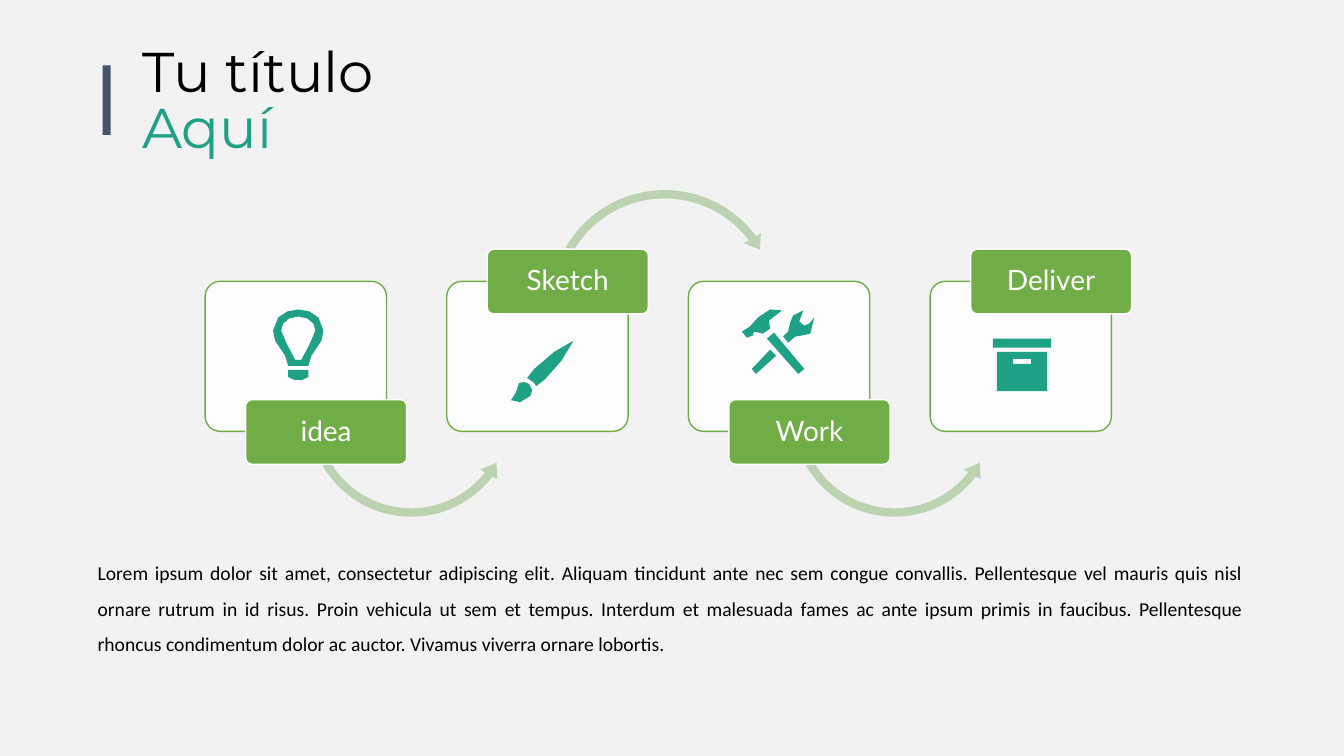
import pptx
import pptx.dml.color
import pptx.enum.shapes
import pptx.enum.text
import pptx.oxml.ns
import pptx.util
from lxml import etree
from pptx.util import Cm

COLORS = {"background": "F2F2F2", "white": "FFFFFF", "green": "70AD47", "arrow": "BBD3B1",
          "teal": "1EA185", "slate": "44546A", "black": "000000"}
SHAPES = pptx.enum.shapes.MSO_SHAPE
ALIGN = pptx.enum.text.PP_ALIGN
MIDDLE = pptx.enum.text.MSO_ANCHOR.MIDDLE


def style(shape, fill, line=None):
    shape.shadow.inherit = False
    shape.fill.solid()
    shape.fill.fore_color.rgb = pptx.dml.color.RGBColor.from_string(COLORS[fill])
    if line:
        shape.line.color.rgb = pptx.dml.color.RGBColor.from_string(COLORS[line])
        shape.line.width = pptx.util.Pt(1)
    else:
        shape.line.fill.background()


def add_text(para, text, font, size, color, spacing, align):
    para.alignment = align
    para.line_spacing = spacing
    span = para.add_run()
    span.text = text
    span.font.name = font
    span.font.size = pptx.util.Pt(size)
    span.font.color.rgb = pptx.dml.color.RGBColor.from_string(COLORS[color])


deck = pptx.Presentation()
deck.slide_width, deck.slide_height = Cm(33.87), Cm(19.05)
page = deck.slides.add_slide(deck.slide_layouts[6])
page.background.fill.solid()
page.background.fill.fore_color.rgb = pptx.dml.color.RGBColor.from_string(COLORS["background"])

# Process steps: card, arrow to the next step, label below or above
CARD_LEFT, CARD_STEP = 5.17, 6.09
steps = ["idea", "Sketch", "Work", "Deliver"]
for index, name in enumerate(steps):
    left = CARD_LEFT + index * CARD_STEP
    label_below = index % 2 == 0
    card = page.shapes.add_shape(SHAPES.ROUNDED_RECTANGLE, Cm(left), Cm(7.09), Cm(4.57), Cm(3.78))
    card.adjustments[0] = 0.1
    style(card, "white", "green")
    card_color = card.fill._xPr.find(".//" + pptx.oxml.ns.qn("a:srgbClr"))
    etree.SubElement(card_color, pptx.oxml.ns.qn("a:alpha"), val="90000")

    if index < len(steps) - 1:
        if label_below:
            kind, top, size = SHAPES.LEFT_CIRCULAR_ARROW, 7.73, 5.43
            bends = [0.039, 4.866, 22.621, 90.245, 0.045]
        else:
            kind, top, size = SHAPES.CIRCULAR_ARROW, 4.65, 6.02
            bends = [0.035, 4.355, 193.89, 125.755, 0.041]
        arrow = page.shapes.add_shape(kind, Cm(left + 2.48), Cm(top), Cm(size), Cm(size))
        for position, bend in enumerate(bends):
            arrow.adjustments[position] = bend
        style(arrow, "arrow")

    label = page.shapes.add_shape(SHAPES.ROUNDED_RECTANGLE, Cm(left + 1.02),
                                  Cm(10.07 if label_below else 6.28), Cm(4.06), Cm(1.63))
    label.adjustments[0] = 0.1
    style(label, "green", "white")
    frame = label.text_frame
    frame.word_wrap = True
    frame.vertical_anchor = MIDDLE
    frame.margin_left = frame.margin_right = Cm(0.15)
    frame.margin_top = frame.margin_bottom = Cm(0.12)
    add_text(frame.paragraphs[0], name, "Lato", 20, "white", 0.9, ALIGN.CENTER)

# Icon outlines, in hundredths of an inch
ICON_UNIT = 0.0254
BULB_CENTER = 296
bulb_halves = [
    [(0, 307), (11, 309), (20, 315), (25, 328), (23, 338), (13, 353), (10, 363)],
    [(0, 314), (9, 316), (15, 321), (17, 328), (11, 342), (3, 357)],
    [(10, 367), (10, 374), (4, 377)]]
bulb = [[(BULB_CENTER + x, y) for x, y in half]
        + [(BULB_CENTER - x, y) for x, y in reversed(half)] for half in bulb_halves]
brush = [
    [(569, 338), (550, 349), (530, 366), (523, 375), (529, 379), (532, 383), (540, 377), (557, 358)],
    [(515, 380), (512, 389), (507, 397), (516, 399), (526, 393), (528, 387), (525, 381), (520, 379)]]
tools = [
    [(748, 329), (757, 331), (764, 326), (763, 318), (776, 308), (764, 307), (752, 315),
     (744, 324), (736, 329), (741, 335), (747, 333)],
    [(808, 315), (803, 321), (798, 323), (793, 319), (797, 308), (787, 313), (784, 320),
     (782, 329), (777, 334), (782, 340), (789, 334), (795, 333), (804, 331)],
    [(768, 330), (761, 336), (792, 371), (798, 366)],
    [(746, 366), (750, 371), (770, 353), (764, 347)]]
archive_parts = [(985, 336, 1043, 345), (989, 349, 1039, 388), (1005, 356, 1023, 361)]
archive = [[(x1, y1), (x2, y1), (x2, y2), (x1, y2)] for x1, y1, x2, y2 in archive_parts]

for contours in [bulb, brush, tools, archive]:
    builder = None
    for contour in contours:
        points = [(Cm(x * ICON_UNIT), Cm(y * ICON_UNIT)) for x, y in contour]
        if builder is None:
            builder = page.shapes.build_freeform(*points[0])
        else:
            builder.move_to(*points[0])
        builder.add_line_segments(points[1:], close=True)
    style(builder.convert_to_shape(), "teal")

# Description
box = page.shapes.add_textbox(Cm(2.13), Cm(13.72), Cm(29.54), Cm(2.92))
frame = box.text_frame
frame.word_wrap = True
frame.vertical_anchor = MIDDLE
frame.margin_left = frame.margin_right = Cm(0.33)
frame.margin_top = frame.margin_bottom = Cm(0.18)
add_text(frame.paragraphs[0],
         "Lorem ipsum dolor sit amet, consectetur adipiscing elit. Aliquam tincidunt ante nec sem "
         "congue convallis. Pellentesque vel mauris quis nisl ornare rutrum in id risus. Proin "
         "vehicula ut sem et tempus. Interdum et malesuada fames ac ante ipsum primis in faucibus. "
         "Pellentesque rhoncus condimentum dolor ac auctor. Vivamus viverra ornare lobortis.",
         "Calibri", 14, "black", 1.5, ALIGN.JUSTIFY)

# Title with accent bar
bar = page.shapes.add_shape(SHAPES.RECTANGLE, Cm(2.59), Cm(1.65), Cm(0.2), Cm(1.75))
style(bar, "slate")
box = page.shapes.add_textbox(Cm(3.33), Cm(1.09), Cm(11.96), Cm(3.12))
frame = box.text_frame
frame.word_wrap = True
for para, text, color in [(frame.paragraphs[0], "Tu título", "black"),
                          (frame.add_paragraph(), "Aquí", "teal")]:
    add_text(para, text, "Montserrat", 40, color, pptx.util.Pt(40), ALIGN.LEFT)

deck.save("out.pptx")
